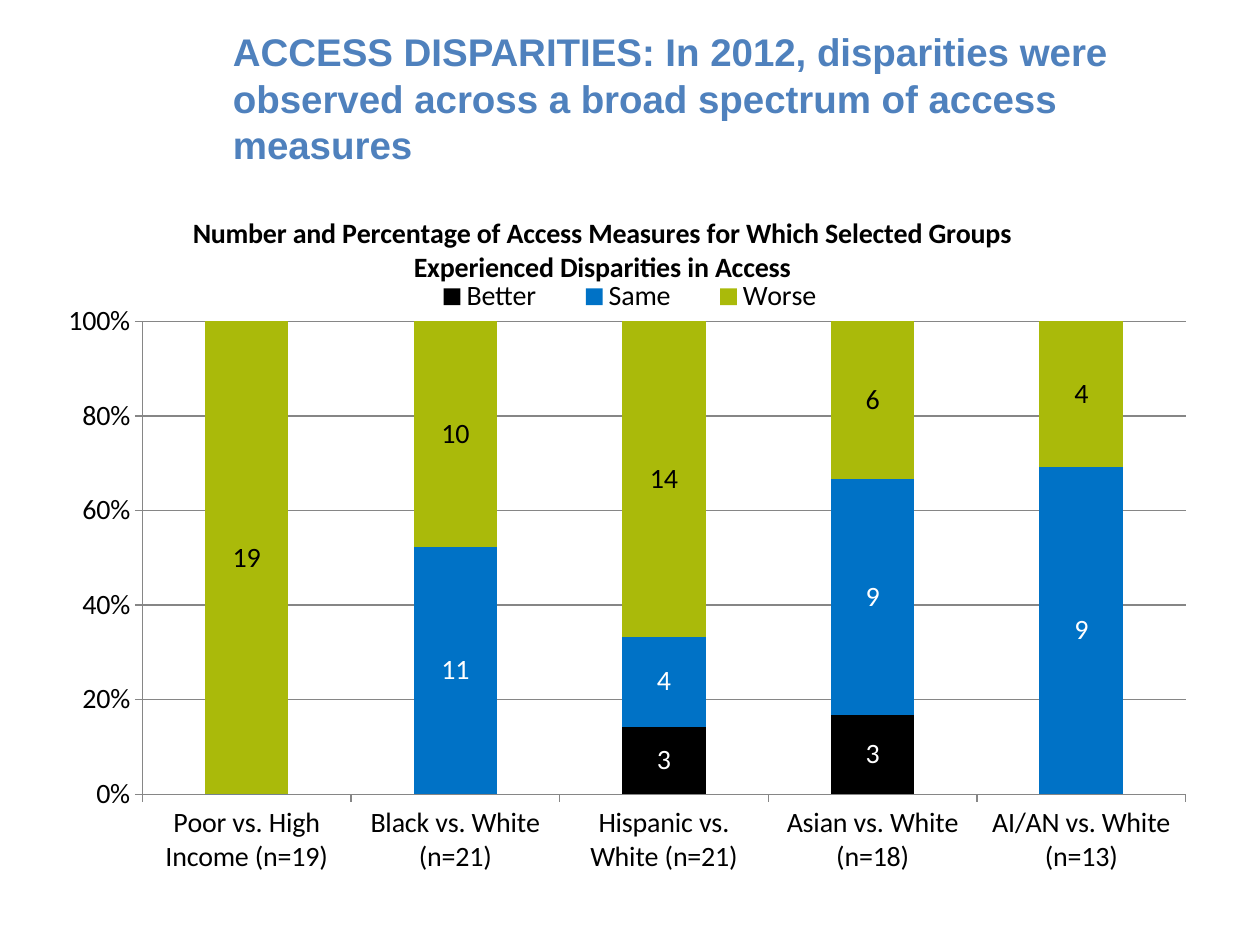
"""Build the access disparities slide with a 100% stacked column chart."""
from lxml import etree
from pptx import Presentation
from pptx import util as u
from pptx.chart.data import CategoryChartData
from pptx.dml.color import RGBColor
from pptx.enum import chart as ch
from pptx.enum import text
from pptx.oxml.ns import qn

TITLE = ("ACCESS DISPARITIES: In 2012, disparities were observed "
         "across a broad spectrum of access measures")
CHART_TITLE = ("Number and Percentage of Access Measures for Which "
               "Selected Groups Experienced Disparities in Access")
CATEGORIES = [
    "Poor vs. High Income (n=19)",
    "Black vs. White (n=21)",
    "Hispanic vs. White (n=21)",
    "Asian vs. White (n=18)",
    "AI/AN vs. White (n=13)",
]
SERIES = [
    ("Better", (None, None, 3, 3, None), "better", "light"),
    ("Same", (0, 11, 4, 9, 9), "same", "light"),
    ("Worse", (19, 10, 14, 6, 4), "worse", "dark"),
]
THEME = {
    "title": "4F81BD", "better": "000000", "same": "0072C6",
    "worse": "AABA0A", "light": "FFFFFF", "dark": "000000",
    "line": "868686", "title_font": "Arial", "chart_font": "Calibri",
    "title_size": 22, "chart_size": 16,
}
TITLE_BOX = (126, 21.6, 558, 68.4)
CHART_BOX = (36, 115.2, 648, 403.2)


def color(name):
    return RGBColor.from_string(THEME[name])


def style(font, kind, fill, bold=False):
    font.name = THEME[kind + "_font"]
    font.size = u.Pt(THEME[kind + "_size"])
    font.bold = bold
    font.color.rgb = color(fill)


def place(parent, index, inner=False, **fractions):
    for old in parent.findall(qn("c:layout")):
        parent.remove(old)
    layout = etree.Element(qn("c:layout"))
    manual = etree.SubElement(layout, qn("c:manualLayout"))
    settings = {"layoutTarget": "inner"} if inner else {}
    settings.update(xMode="edge", yMode="edge", **fractions)
    for tag, value in settings.items():
        etree.SubElement(manual, qn("c:" + tag)).set("val", str(value))
    parent.insert(index, layout)


def add_title(s):
    sp = s.shapes.add_textbox(*map(u.Pt, TITLE_BOX))
    tf = sp.text_frame
    tf.word_wrap = True
    tf.vertical_anchor = text.MSO_ANCHOR.MIDDLE
    tf.text = TITLE
    style(tf.paragraphs[0].runs[0].font, "title", "title", True)


def style_axes(chart):
    for axis in (chart.category_axis, chart.value_axis):
        axis.major_tick_mark = ch.XL_TICK_MARK.OUTSIDE
        axis.minor_tick_mark = ch.XL_TICK_MARK.NONE
        axis.format.line.color.rgb = color("line")
        axis.format.line.width = u.Pt(0.75)
        style(axis.tick_labels.font, "chart", "dark")
    axis = chart.value_axis
    axis.minimum_scale, axis.maximum_scale, axis.major_unit = 0, 1, 0.2
    axis.tick_labels.number_format = "0%"
    axis.tick_labels.number_format_is_linked = False
    axis.has_major_gridlines = True
    axis.major_gridlines.format.line.color.rgb = color("line")
    axis.major_gridlines.format.line.width = u.Pt(0.75)


def style_series(plot):
    plot.gap_width, plot.overlap = 150, 100
    plot.vary_by_categories = False
    for series, (_, _, fill, label) in zip(plot.series, SERIES):
        series.format.fill.solid()
        series.format.fill.fore_color.rgb = color(fill)
        labels = series.data_labels
        labels.show_value = True
        labels.number_format = "0;;;"
        labels.number_format_is_linked = False
        style(labels.font, "chart", label)


def add_chart(s):
    data = CategoryChartData()
    data.categories = CATEGORIES
    for name, values, _, _ in SERIES:
        data.add_series(name, values)
    chart = s.shapes.add_chart(ch.XL_CHART_TYPE.COLUMN_STACKED_100,
                               *map(u.Pt, CHART_BOX), data).chart
    style(chart.font, "chart", "dark")
    chart.has_title = True
    tf = chart.chart_title.text_frame
    tf.text = CHART_TITLE
    style(tf.paragraphs[0].runs[0].font, "chart", "dark", True)
    chart.chart_title.include_in_layout = False
    chart.has_legend = True
    legend = chart.legend
    legend.position = ch.XL_LEGEND_POSITION.TOP
    legend.include_in_layout = False
    style(legend.font, "chart", "dark")
    style_axes(chart)
    style_series(chart.plots[0])
    root = chart.element.find(qn("c:chart"))
    place(root.find(qn("c:title")), 1, x=0.11, y=0.01)
    place(root.find(qn("c:legend")), 1, x=0.3, y=0.1, w=0.4, h=0.07)
    place(root.find(qn("c:plotArea")), 0, inner=True,
          x=0.07, y=0.17, w=0.92, h=0.67)


def main():
    prs = Presentation()
    prs.slide_width, prs.slide_height = u.Pt(720), u.Pt(540)
    s = prs.slides.add_slide(prs.slide_layouts[6])
    add_title(s)
    add_chart(s)
    prs.save("out.pptx")


if __name__ == "__main__":
    main()
